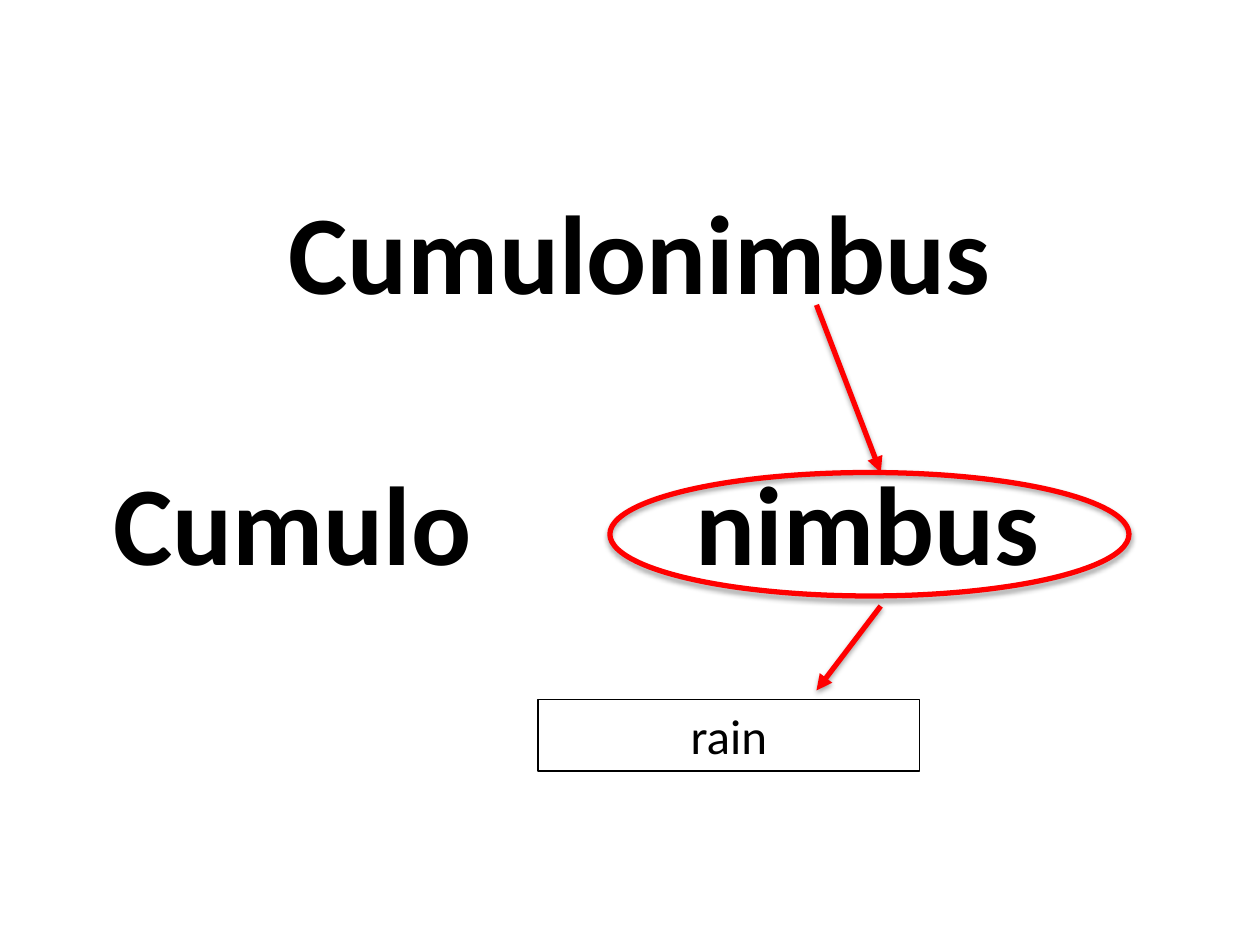
from lxml import etree
from pptx import Presentation
from pptx.dml.color import RGBColor
from pptx.enum import shapes, text
from pptx.oxml.ns import qn
from pptx.util import Inches, Pt

COLORS = {"text": "000000", "accent": "FF0000", "shadow": "000000"}
FONT = "Calibri"

WORD = "Cumulonimbus"
WORD_PARTS = ("Cumulo", "nimbus")
MEANING = "rain"

WORD_BOX = (0.8, 1.4, 8.55, 3.33)
PART_TAB = 4.62
MEANING_BOX = (4.27, 5.55, 3.03, 0.57)
RING_BOX = (4.84, 3.75, 4.12, 0.98)
ARROWS = [(6.48, 2.42, 6.99, 3.75), (6.99, 4.81, 6.48, 5.48)]


def rgb(name):
    return RGBColor.from_string(COLORS[name])


def inches(values):
    return [Inches(v) for v in values]


def style_text(p, size, bold=False):
    p.font.name, p.font.size, p.font.bold = FONT, Pt(size), bold
    p.font.color.rgb = rgb("text")


def style_line(sp, color, width):
    sp.line.color.rgb = rgb(color)
    sp.line.width = Pt(width)


def add_shadow(sp, opacity, distance):
    """Drop a soft shadow straight down; opacity in percent, distance in points."""
    effects = etree.SubElement(sp._element.spPr, qn("a:effectLst"))
    outer = etree.SubElement(effects, qn("a:outerShdw"), blurRad=str(Pt(3.1)),
                             dist=str(Pt(distance)), dir="5400000", rotWithShape="0")
    color = etree.SubElement(outer, qn("a:srgbClr"), val=COLORS["shadow"])
    etree.SubElement(color, qn("a:alpha"), val=str(opacity * 1000))


def add_words(s):
    title = s.shapes.title
    title.left, title.top, title.width, title.height = inches(WORD_BOX)
    tf = title.text_frame
    tf.word_wrap = True
    tf.auto_size = text.MSO_AUTO_SIZE.NONE
    tf.vertical_anchor = text.MSO_ANCHOR.TOP
    whole, parts = tf.paragraphs[0], tf.add_paragraph()
    whole.text, whole.alignment = WORD, text.PP_ALIGN.CENTER
    parts.text, parts.alignment = "\t".join(WORD_PARTS), text.PP_ALIGN.LEFT
    parts.space_before = Pt(78)
    tabs = etree.SubElement(parts._p.get_or_add_pPr(), qn("a:tabLst"))
    etree.SubElement(tabs, qn("a:tab"), pos=str(Inches(PART_TAB)), algn="l")
    for p in (whole, parts):
        style_text(p, 64, bold=True)


def add_meaning(s):
    box = s.shapes.add_textbox(*inches(MEANING_BOX))
    style_line(box, "text", 0.75)
    tf = box.text_frame
    tf.word_wrap = True
    p = tf.paragraphs[0]
    p.text, p.alignment = MEANING, text.PP_ALIGN.CENTER
    style_text(p, 28)


def add_arrow(s, ends):
    arrow = s.shapes.add_connector(shapes.MSO_CONNECTOR.STRAIGHT, *inches(ends))
    style_line(arrow, "accent", 3)
    etree.SubElement(arrow.line._get_or_add_ln(), qn("a:tailEnd"), type="triangle")
    add_shadow(arrow, 36, 1.6)


def add_ring(s):
    ring = s.shapes.add_shape(shapes.MSO_SHAPE.OVAL, *inches(RING_BOX))
    ring.fill.background()
    style_line(ring, "accent", 3)
    add_shadow(ring, 34, 1.8)


def main():
    prs = Presentation()
    prs.slide_width, prs.slide_height = Inches(10), Inches(7.5)
    s = prs.slides.add_slide(prs.slide_layouts[5])
    add_words(s)
    add_meaning(s)
    for ends in ARROWS:
        add_arrow(s, ends)
    add_ring(s)
    prs.save("out.pptx")


if __name__ == "__main__":
    main()
